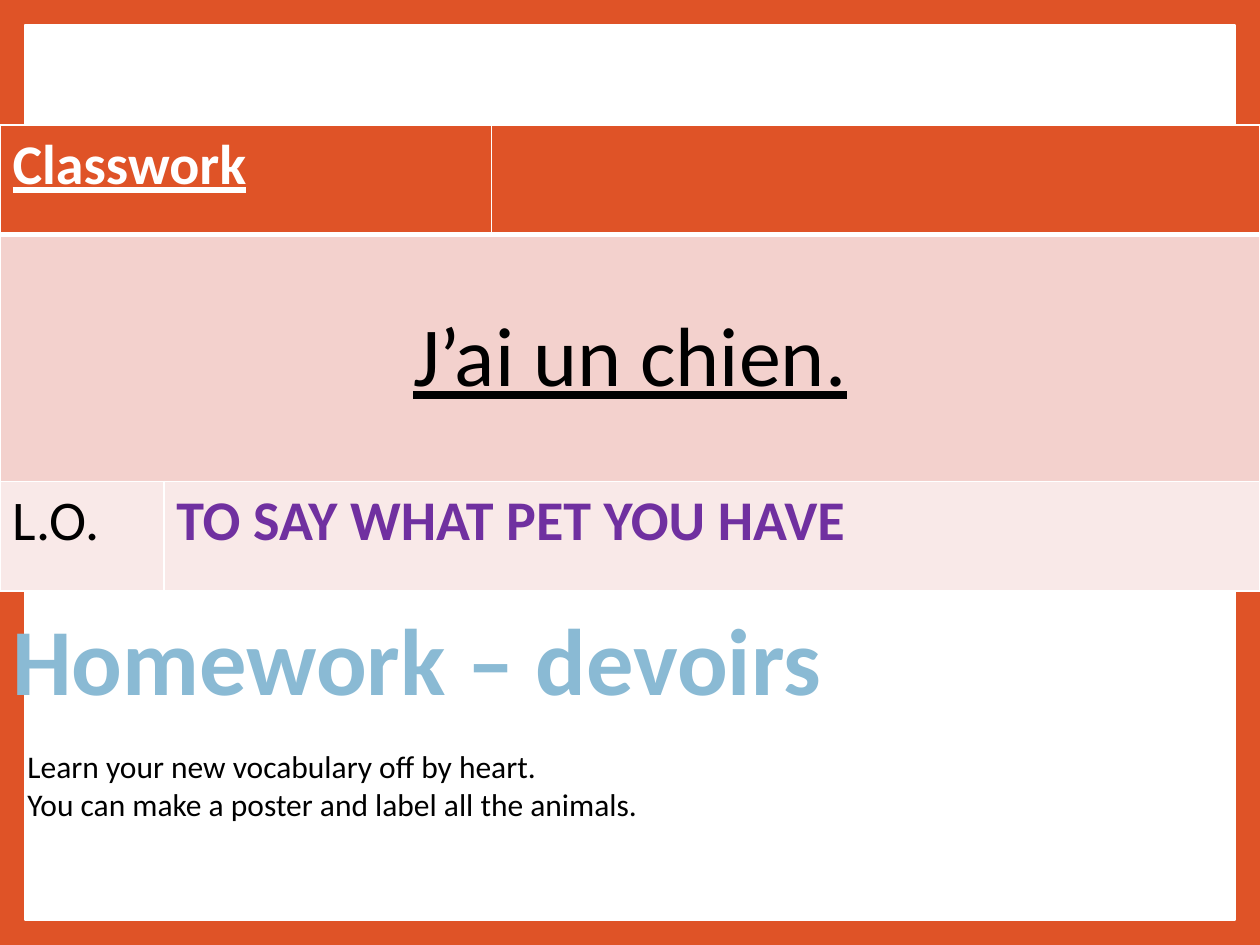
from lxml.etree import SubElement
from pptx import Presentation
from pptx.dml.color import RGBColor as RGB
from pptx.enum.shapes import MSO_SHAPE as SHAPE
from pptx.enum.text import MSO_ANCHOR as ANCHOR, PP_ALIGN as ALIGN
from pptx.oxml.ns import qn
from pptx.util import Inches, Pt

COLORS = {
    "orange": "DF5327", "white": "FFFFFF", "black": "000000",
    "band": "F3D1CD", "pale": "F9E9E8", "purple": "7030A0", "blue": "8ABAD4",
}
COLS = [1.3, 2.6, 6.1]
ROWS = [0.87, 1.96, 0.87]
FILLS = ["orange", "band", "pale"]
MERGES = [(0, 0, 1), (1, 0, 2), (2, 1, 2)]  # row, first column, last column
TEXTS = {
    (0, 0): ("Classwork", "white", dict(size=Pt(32), bold=True, underline=True)),
    (1, 0): ("J’ai un chien.", "black", dict(size=Pt(48), bold=False, underline=True)),
    (2, 0): ("L.O.", "black", dict(size=Pt(32), bold=False)),
    (2, 1): ("TO SAY WHAT PET YOU HAVE", "purple", dict(size=Pt(32), bold=True)),
}


def rgb(name):
    return RGB.from_string(COLORS[name])


def write(p, text, color, **fmt):
    r = p.add_run()
    r.text = text
    r.font.name = "Calibri"
    r.font.color.rgb = rgb(color)
    for key, value in fmt.items():
        setattr(r.font, key, value)


def set_borders(cell, bottom):
    tc_pr = cell._tc.get_or_add_tcPr()
    for side, width in dict(L=1, R=1, T=1, B=bottom).items():
        ln = SubElement(tc_pr, qn(f"a:ln{side}"), w=str(Pt(width)))
        fill = SubElement(ln, qn("a:solidFill"))
        SubElement(fill, qn("a:srgbClr"), val=COLORS["white"])


def add_panel(s, *box):
    sp = s.shapes.add_shape(SHAPE.RECTANGLE, *map(Inches, box))
    sp.shadow.inherit = False
    sp.fill.solid()
    sp.fill.fore_color.rgb = sp.line.color.rgb = rgb("white")
    sp.line.width = Pt(1)


def add_lesson_table(s, *box):
    table = s.shapes.add_table(len(ROWS), len(COLS), *map(Inches, box)).table
    for col, width in zip(table.columns, COLS):
        col.width = Inches(width)
    for row, height, fill in zip(table.rows, ROWS, FILLS):
        row.height = Inches(height)
        for cell in row.cells:
            set_borders(cell, bottom=3 if fill == "orange" else 1)
            cell.fill.solid()
            cell.fill.fore_color.rgb = rgb(fill)
    for row, first, last in MERGES:
        table.cell(row, first).merge(table.cell(row, last))
    for position, (text, color, fmt) in TEXTS.items():
        write(table.cell(*position).text_frame.paragraphs[0], text, color, **fmt)
    # The lesson phrase sits in the middle of its wide band
    phrase = table.cell(1, 0)
    phrase.vertical_anchor = ANCHOR.MIDDLE
    phrase.text_frame.paragraphs[0].alignment = ALIGN.CENTER


def add_text(s, box, lines, color, **fmt):
    tf = s.shapes.add_textbox(*map(Inches, box)).text_frame
    tf.word_wrap = True
    for i, line in enumerate(lines):
        p = tf.add_paragraph() if i else tf.paragraphs[0]
        write(p, line, color, **fmt)


def main():
    prs = Presentation()
    prs.slide_width, prs.slide_height = Inches(10), Inches(7.5)
    s = prs.slides.add_slide(prs.slide_layouts[6])
    s.background.fill.solid()
    s.background.fill.fore_color.rgb = rgb("orange")

    # Classwork
    add_panel(s, 0.2, 0.2, 9.6, 7.1)
    add_lesson_table(s, 0, 0.99, 10, sum(ROWS))

    # Homework
    add_text(s, (0, 4.72, 6.86, 1.01), ["Homework – devoirs"], "blue",
             size=Pt(54), bold=True)
    add_text(s, (0.12, 5.88, 7.8, 0.71),
             ["Learn your new vocabulary off by heart.",
              "You can make a poster and label all the animals."],
             "black", size=Pt(18))
    prs.save("out.pptx")


if __name__ == "__main__":
    main()
